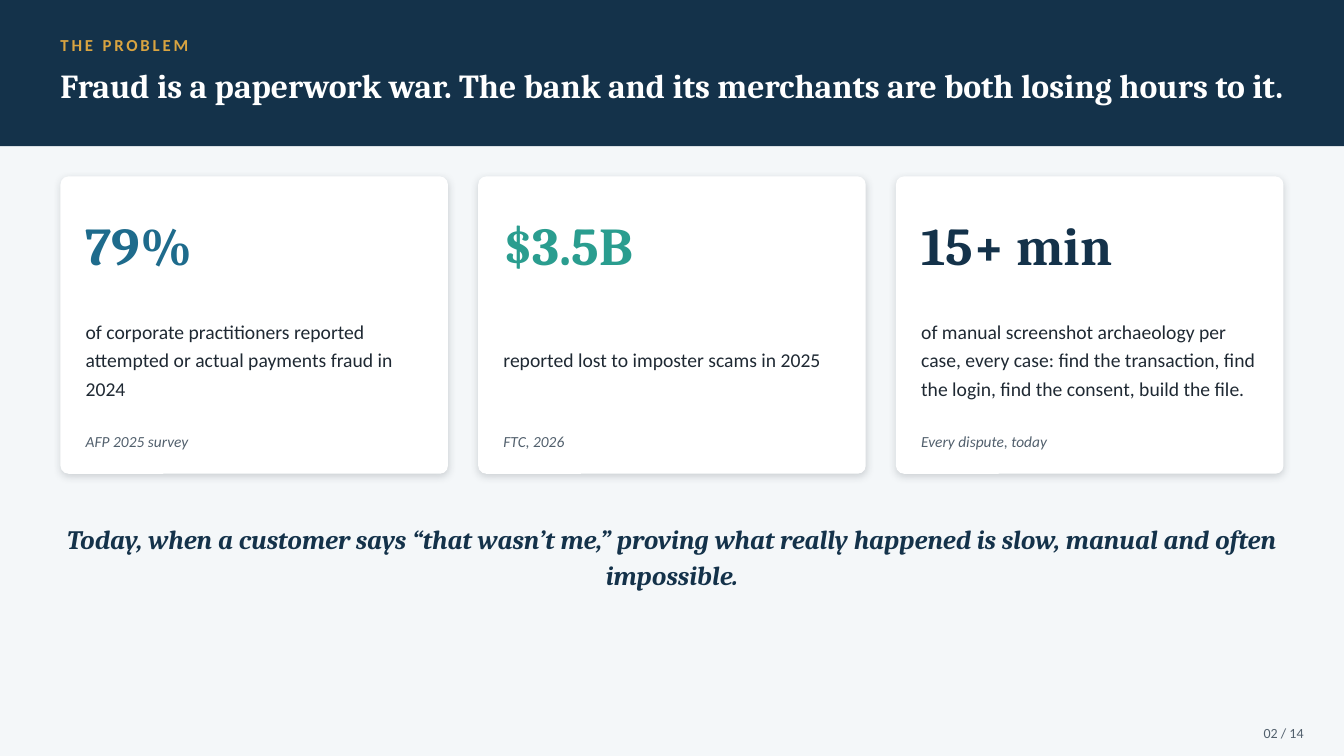
from lxml import etree
from pptx import Presentation
from pptx import util as u
from pptx.dml.color import RGBColor
from pptx.enum import shapes, text
from pptx.oxml import ns

NAVY, INK, GREY, WHITE = "14324A", "1F2933", "52606D", "FFFFFF"
BLUE, TEAL, GOLD, PALE = "1E6B8C", "2A9D8F", "D9A441", "F4F7F9"
HEADING, BODY = "Cambria", "Calibri"
MARGIN, CONTENT_WIDTH = 0.6, 12.13
CARD_TOP, CARD_HEIGHT, CARD_GAP, CARD_PADDING = 1.75, 2.95, 0.3, 0.25

STATISTICS = [
    ("79%", BLUE,
     "of corporate practitioners reported attempted or actual payments fraud in 2024",
     "AFP 2025 survey"),
    ("$3.5B", TEAL, "reported lost to imposter scams in 2025", "FTC, 2026"),
    ("15+ min", NAVY,
     "of manual screenshot archaeology per case, every case: find the transaction, "
     "find the login, find the consent, build the file.",
     "Every dispute, today"),
]


def colour(value):
    return RGBColor.from_string(value)


class SlideBuilder:
    def __init__(self, presentation):
        self.slide = presentation.slides.add_slide(presentation.slide_layouts[5])
        background = self.slide.background.fill
        background.solid()
        background.fore_color.rgb = colour(PALE)

    def block(self, kind, left, top, width, height, fill):
        shape = self.slide.shapes.add_shape(
            kind, *map(u.Inches, (left, top, width, height)))
        shape.shadow.inherit = False
        shape.fill.solid()
        shape.fill.fore_color.rgb = colour(fill)
        shape.line.fill.background()
        return shape

    def card(self, left, top, width, height):
        shape = self.block(shapes.MSO_SHAPE.ROUNDED_RECTANGLE,
                           left, top, width, height, WHITE)
        shape.adjustments[0] = 0.027
        effects = shape._element.spPr.find(ns.qn("a:effectLst"))
        shadow = etree.SubElement(
            effects, ns.qn("a:outerShdw"), blurRad=str(u.Pt(6)), dist=str(u.Pt(2)),
            dir="5400000", algn="bl", rotWithShape="0")
        tint = etree.SubElement(shadow, ns.qn("a:srgbClr"), val=INK)
        etree.SubElement(tint, ns.qn("a:alpha"), val="18000")

    def label(self, content, left, top, width, height, **style):
        shape = self.slide.shapes.add_textbox(
            *map(u.Inches, (left, top, width, height)))
        self.set_text(shape, content, **style)

    def title(self, content, left, top, width, height, **style):
        shape = self.slide.shapes.title
        self.slide.shapes._spTree.append(shape._element)
        shape.left, shape.top, shape.width, shape.height = map(
            u.Inches, (left, top, width, height))
        self.set_text(shape, content, **style)

    def set_text(self, shape, content, size, fill, font=BODY, bold=False, italic=False,
                 align=text.PP_ALIGN.LEFT, anchor=text.MSO_ANCHOR.MIDDLE,
                 line_spacing=1.0, tracking=0):
        frame = shape.text_frame
        frame.word_wrap = True
        frame.auto_size = text.MSO_AUTO_SIZE.NONE
        frame.vertical_anchor = anchor
        frame.margin_left = frame.margin_right = 0
        frame.margin_top = frame.margin_bottom = 0
        paragraph = frame.paragraphs[0]
        run = paragraph.add_run()
        run.text = content
        paragraph.alignment = align
        paragraph.line_spacing = line_spacing
        paragraph.font.name = font
        paragraph.font.size = u.Pt(size)
        paragraph.font.bold = bold
        paragraph.font.italic = italic
        paragraph.font.color.rgb = colour(fill)
        if tracking:
            run._r.get_or_add_rPr().set("spc", str(tracking * 100))


def main():
    presentation = Presentation()
    presentation.slide_width = u.Inches(13.33)
    presentation.slide_height = u.Inches(7.5)
    builder = SlideBuilder(presentation)

    builder.block(shapes.MSO_SHAPE.RECTANGLE, 0, 0, 13.33, 1.45, NAVY)
    builder.label("THE PROBLEM", MARGIN, 0.28, CONTENT_WIDTH, 0.32,
                  size=12, fill=GOLD, bold=True, tracking=2)
    builder.title(
        "Fraud is a paperwork war. The bank and its merchants are both losing hours to it.",
        MARGIN, 0.62, CONTENT_WIDTH, 0.78, size=24, fill=WHITE, font=HEADING,
        bold=True, anchor=text.MSO_ANCHOR.TOP, line_spacing=1.05)

    count = len(STATISTICS)
    card_width = (CONTENT_WIDTH - (count - 1) * CARD_GAP) / count
    inner_width = card_width - 2 * CARD_PADDING
    for index, (figure, accent, description, source) in enumerate(STATISTICS):
        left = MARGIN + index * (card_width + CARD_GAP)
        inner_left = left + CARD_PADDING
        builder.card(left, CARD_TOP, card_width, CARD_HEIGHT)
        builder.label(figure, inner_left, 2, inner_width, 0.85,
                      size=38, fill=accent, font=HEADING, bold=True)
        builder.label(description, inner_left, 2.85, inner_width, 1.4,
                      size=14, fill=INK, line_spacing=1.2)
        builder.label(source, inner_left, 4.2, inner_width, 0.35,
                      size=11, fill=GREY, italic=True)

    builder.label(
        "Today, when a customer says “that wasn’t me,” proving what really happened "
        "is slow, manual and often impossible.",
        MARGIN, 5.05, CONTENT_WIDTH, 0.9, size=19, fill=NAVY, font=HEADING,
        bold=True, italic=True, align=text.PP_ALIGN.CENTER, line_spacing=1.15)
    builder.label("02 / 14", 11.73, 7.12, 1.2, 0.3,
                  size=10, fill=GREY, align=text.PP_ALIGN.RIGHT)

    presentation.save("out.pptx")


if __name__ == "__main__":
    main()
